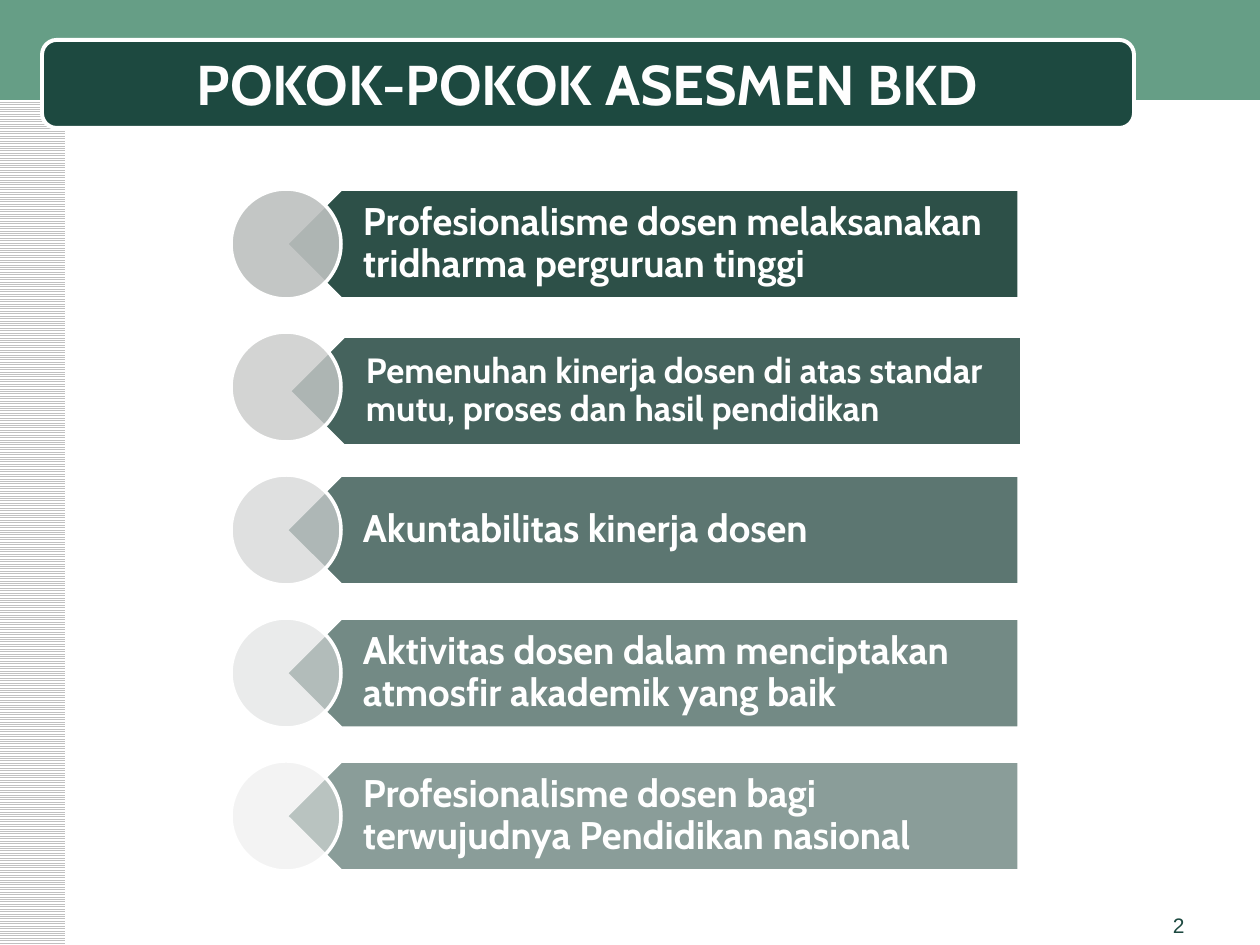
from dataclasses import dataclass

from lxml import etree
from pptx import Presentation
from pptx.dml.color import RGBColor
from pptx.enum.dml import MSO_PATTERN
from pptx.enum.shapes import MSO_SHAPE
from pptx.enum.text import MSO_ANCHOR, MSO_AUTO_SIZE, PP_ALIGN
from pptx.oxml.ns import qn
from pptx.util import Emu, Pt

RECT = MSO_SHAPE.RECTANGLE
ROUND = MSO_SHAPE.ROUNDED_RECTANGLE
ARROW = MSO_SHAPE.PENTAGON
OVAL = MSO_SHAPE.OVAL
STRIPES = MSO_PATTERN.LIGHT_HORIZONTAL
MIDDLE = MSO_ANCHOR.MIDDLE
TOP = MSO_ANCHOR.TOP
LEFT, CENTER, RIGHT = PP_ALIGN.LEFT, PP_ALIGN.CENTER, PP_ALIGN.RIGHT
FIXED = MSO_AUTO_SIZE.NONE


@dataclass(frozen=True)
class Theme:
    white: str = "FFFFFF"
    title: str = "FEFEFE"
    stripe: str = "C0C0C0"
    band: str = "669E86"
    dark: str = "1D4940"
    bar: str = "173D35"
    font: str = "Cabin"
    plain: str = "Arial"
    head: int = 32
    body: int = 22
    small: int = 20
    note: int = 12


THEME = Theme()
ROW_TOP, PITCH, SIZE = 189, 143, 110
ROWS = [
    ("Profesionalisme dosen melaksanakan tridharma perguruan tinggi",
     "BDC0BF", THEME.body, 0, 0),
    ("Pemenuhan kinerja dosen di atas standar mutu, proses dan hasil pendidikan",
     "C8CAC9", THEME.small, 3, 4),
    ("Akuntabilitas kinerja dosen", "D2D4D4", THEME.body, 0, 0),
    ("Aktivitas dosen dalam menciptakan atmosfir akademik yang baik",
     "DDDEDE", THEME.body, 0, 0),
    ("Profesionalisme dosen bagi terwujudnya Pendidikan nasional",
     "E8E9E8", THEME.body, 0, 0),
]


def px(n):
    return Emu(round(n * 914400 / 126))


def color(code):
    return RGBColor.from_string(code)


def add_shape(slide, kind, box, fill, line=None, alpha=None):
    shape = slide.shapes.add_shape(kind, *map(px, box))
    shape.shadow.inherit = False
    shape.fill.solid()
    shape.fill.fore_color.rgb = color(fill)
    if alpha is not None:
        tint = shape._element.spPr.find(f".//{qn('a:srgbClr')}")
        etree.SubElement(tint, qn("a:alpha"), val=str(alpha * 1000))
    if line is None:
        shape.line.fill.background()
    else:
        shape.line.color.rgb = color(THEME.white)
        shape.line.width = Pt(line)
    return shape


def set_text(shape, text, size, tone, font, bold, align, anchor):
    frame = shape.text_frame
    frame.text = text
    frame.word_wrap = True
    frame.auto_size = FIXED
    frame.vertical_anchor = anchor
    para = frame.paragraphs[0]
    para.alignment = align
    para.font.size = Pt(size)
    para.font.name = font
    para.font.bold = bold
    para.font.color.rgb = color(tone)
    return frame


def add_frame(slide):
    side = add_shape(slide, RECT, (0, 0, 65, 945), THEME.white)
    side.fill.patterned()
    side.fill.pattern = STRIPES
    side.fill.fore_color.rgb = color(THEME.stripe)
    side.fill.back_color.rgb = color(THEME.white)
    add_shape(slide, RECT, (0, 0, 1260, 100), THEME.band)
    add_shape(slide, ROUND, (42, 40, 1092, 88), THEME.dark, 2.25)


def add_title(slide, text):
    title = slide.shapes.title
    title.left, title.top, title.width, title.height = map(px, (54, 42, 1067, 83))
    set_text(title, text, THEME.head, THEME.title, THEME.font, True, CENTER, MIDDLE)
    slide.shapes._spTree.append(title._element)


def add_row(slide, index, text, dot, size, right, down):
    top = ROW_TOP + index * PITCH
    alpha = 90 - 10 * index
    bar = add_shape(slide, ARROW, (286 + right, top + down, 733, SIZE),
                    THEME.bar, 2, alpha)
    bar.rotation = 180
    label = slide.shapes.add_textbox(
        *map(px, (314 + right, top + down, 705, SIZE)))
    frame = set_text(label, text, size, THEME.white, THEME.font, True, LEFT, MIDDLE)
    frame.margin_left, frame.margin_right = px(49), px(21)
    frame.margin_top = frame.margin_bottom = px(11)
    frame.paragraphs[0].line_spacing = 0.9
    add_shape(slide, OVAL, (231, top, SIZE, SIZE), dot, 2, alpha)


def add_number(slide, text):
    box = slide.shapes.add_textbox(*map(px, (903, 906, 294, 34)))
    set_text(box, text, THEME.note, THEME.dark, THEME.plain, False, RIGHT, TOP)


def main():
    deck = Presentation()
    deck.slide_width, deck.slide_height = px(1260), px(945)
    slide = deck.slides.add_slide(deck.slide_layouts[5])
    add_frame(slide)
    add_title(slide, "POKOK-POKOK ASESMEN BKD")
    for index, row in enumerate(ROWS):
        add_row(slide, index, *row)
    add_number(slide, "2")
    deck.save("out.pptx")


if __name__ == "__main__":
    main()
